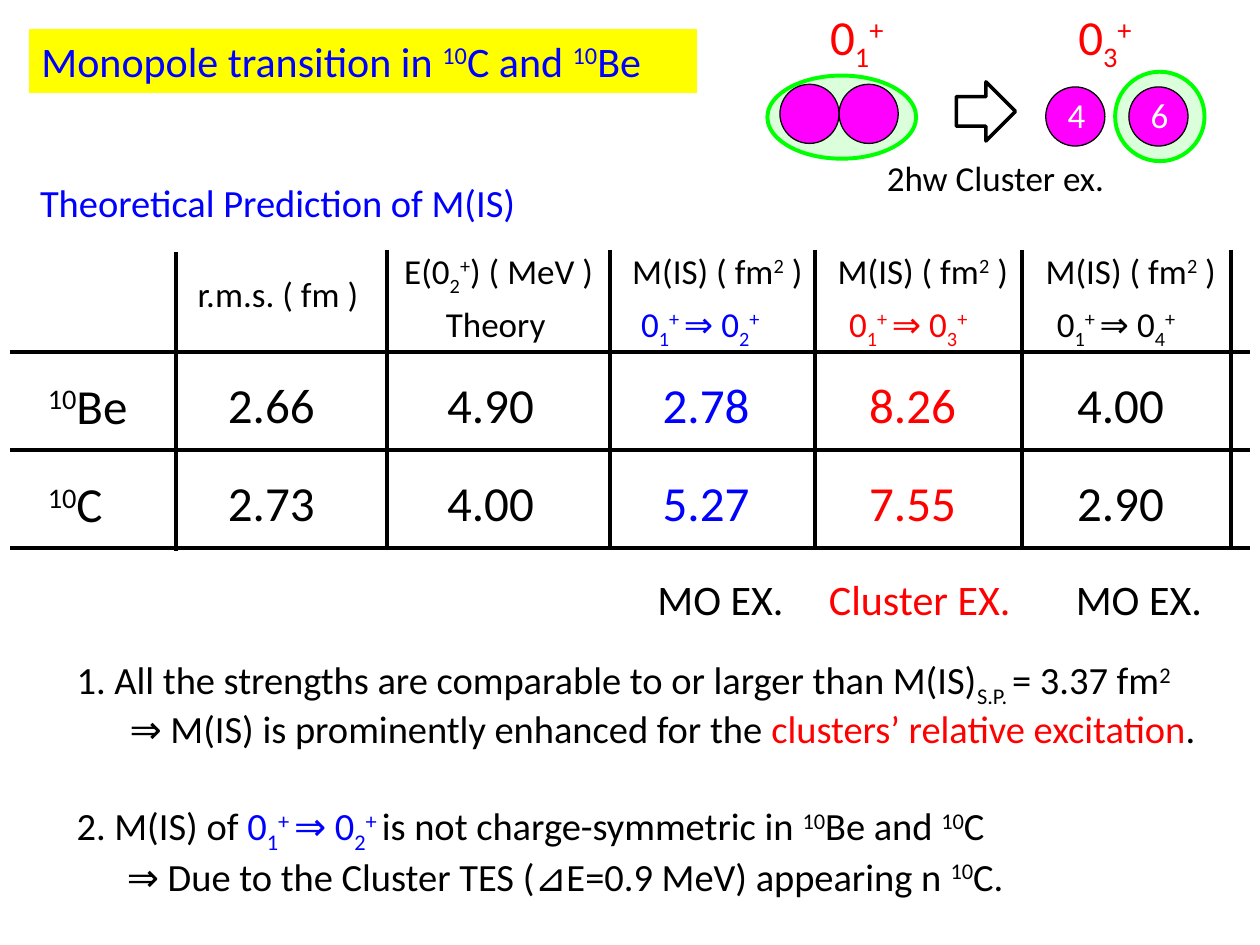
from lxml.etree import SubElement
from pptx import Presentation
from pptx.dml.color import RGBColor
from pptx.enum.shapes import MSO_CONNECTOR, MSO_SHAPE
from pptx.enum.text import MSO_ANCHOR, MSO_AUTO_SIZE, PP_ALIGN
from pptx.oxml.ns import qn
from pptx.util import Pt

BLACK, BLUE, RED, WHITE = "000000", "0000FF", "FF0000", "FFFFFF"
YELLOW, MAGENTA, GREEN, PALE_GREEN = "FFFF00", "FF00FF", "00FF00", "CCFFCC"

# Content: "|" separates runs, "^" raises a run and "_" lowers it
TITLE = "Monopole transition in |^10|C and |^10|Be"
SUBTITLE = "Theoretical Prediction of M(IS)"
STRENGTH = "M(IS) ( fm|^2| )"


def transition(level):
    return f"0|_1|^+ |⇒ 0|_{level}|^+"


NUCLEI = ["|^10|Be", "|^10|C"]
NUCLEUS_WIDTHS = [63.4, 49]
# Values centre, colour, values, then heading, second heading and
# excitation kind, each as (text, left, width)
COLUMNS = [
    (158.8, BLACK, ["2.66", "2.73"], ("r.m.s. ( fm )", 105.8, 107.3), None, None),
    (284, BLACK, ["4.90", "4.00"], ("E(0|_2|^+|) ( MeV )", 223.9, 125.3),
     ("Theory", 247.7, 72), None),
    (407.2, BLUE, ["2.78", "5.27"], (STRENGTH, 354.2, 113.8),
     (transition(2), 359.3, 95), ("MO EX.", 368.6, 87.1)),
    (525.2, RED, ["8.26", "7.55"], (STRENGTH, 471.6, 113.8),
     (transition(3), 478.1, 91.4), ("Cluster EX.", 466.6, 119.5)),
    (644, BLACK, ["4.00", "2.90"], (STRENGTH, 590.4, 113.8),
     (transition(4), 596.9, 91.4), ("MO EX.", 607.7, 87.1)),
]
# Left, top, width, coloured parts
REMARKS = [
    (36.7, 371.5, 650.9, [("1. All the strengths are comparable to or larger than "
                           "M(IS)|_S.P. |= 3.37 fm|^2", BLACK)]),
    (67, 399.6, 633.6, [("⇒ M(IS) is prominently enhanced for the ", BLACK),
                        ("clusters’ relative excitation", RED), (".", BLACK)]),
    (36.7, 455, 554.4, [("2. M(IS) of ", BLACK), ("0|_1|^+ |⇒ 0|_2|^+ ", BLUE),
                        ("is not charge-symmetric in |^10|Be and |^10|C", BLACK)]),
    (65.5, 483.8, 529.9, [("⇒ Due to the Cluster TES (⊿E=0.9 MeV) appearing n |^10|C.",
                           BLACK)]),
]

# Grid of the table
FIRST_RULE, ROW_HEIGHT = 200.9, 56.15
RULE_LEFT, RULE_RIGHT = 5.8, 714.2
COLUMN_RULES = [221, 348.5, 465.8, 583.9, 703.4]

deck = Presentation()
deck.slide_width, deck.slide_height = Pt(720), Pt(540)
slide = deck.slides.add_slide(deck.slide_layouts[6])


def color(hex_string):
    return RGBColor.from_string(hex_string)


def write(frame, parts, size, ink=BLACK, wrap=False):
    """Fill a frame with markup, or with a list of (markup, colour)."""
    frame.word_wrap = wrap
    frame.auto_size = MSO_AUTO_SIZE.SHAPE_TO_FIT_TEXT
    paragraph = frame.paragraphs[0]
    paragraph.alignment = PP_ALIGN.LEFT
    for markup, part_ink in [(parts, ink)] if isinstance(parts, str) else parts:
        for piece in filter(None, markup.split("|")):
            shift = {"^": "30000", "_": "-25000"}.get(piece[0])
            run = paragraph.add_run()
            run.text = piece[1:] if shift else piece
            run.font.name, run.font.size = "Calibri", Pt(size)
            run.font.color.rgb = color(part_ink)
            if shift:
                run.font._element.set("baseline", shift)


def text(parts, left, top, width, size=20, ink=BLACK):
    height = size * 1.22 + 7.2
    box = slide.shapes.add_textbox(Pt(left), Pt(top), Pt(width), Pt(height))
    write(box.text_frame, parts, size=size, ink=ink)


def rule(x1, y1, x2, y2):
    line = slide.shapes.add_connector(MSO_CONNECTOR.STRAIGHT,
                                      Pt(x1), Pt(y1), Pt(x2), Pt(y2))
    line.line.color.rgb, line.line.width = color(BLACK), Pt(2.25)
    SubElement(line._element.spPr, qn("a:effectLst"))


def shape(kind, left, top, width, height, fill=None, line=None, weight=0.75, opacity=100):
    item = slide.shapes.add_shape(kind, Pt(left), Pt(top), Pt(width), Pt(height))
    item.shadow.inherit = False
    if fill:
        item.fill.solid()
        item.fill.fore_color.rgb = color(fill)
        if opacity < 100:
            tint = item._element.spPr.find(qn("a:solidFill"))[0]
            SubElement(tint, qn("a:alpha"), val=str(opacity * 1000))
    else:
        item.fill.background()
    if line:
        item.line.color.rgb, item.line.width = color(line), Pt(weight)
    else:
        item.line.fill.background()
    return item


# Title and subtitle
banner = shape(MSO_SHAPE.RECTANGLE, 16.6, 16.6, 381.6, 36.5, fill=YELLOW)
banner.text_frame.vertical_anchor = MSO_ANCHOR.TOP
write(banner.text_frame, TITLE, size=24, ink=BLUE, wrap=True)
text(SUBTITLE, 15.8, 98.6, 294.5, size=22, ink=BLUE)

# Table rules
for row in range(3):
    y = FIRST_RULE + row * ROW_HEIGHT
    rule(RULE_LEFT, y, RULE_RIGHT, y)
rule(100.8, 144, 100.8, 314.6)
for x in COLUMN_RULES:
    rule(x, 142.6, x, 312.5)

# Table entries
for row, (nucleus, width) in enumerate(zip(NUCLEI, NUCLEUS_WIDTHS)):
    text(nucleus, 20.2, 211 + row * ROW_HEIGHT, width, size=28)
for center, ink, values, heading, subheading, excitation in COLUMNS:
    text(*heading[:2], 139 if subheading else 151.9, heading[2])
    if subheading:
        text(*subheading[:2], 169.2, subheading[2], ink=ink)
    for row, value in enumerate(values):
        text(value, center - 35.6, 210.2 + row * ROW_HEIGHT, 71.3, size=28, ink=ink)
    if excitation:
        text(*excitation[:2], 324, excitation[2], size=24,
             ink=RED if ink == RED else BLACK)

# Remarks
for left, top, width, parts in REMARKS:
    text(parts, left, top, width, size=22)

# Cluster excitation sketch: clouds first, then the clusters
for left, top, width, height in [(438.5, 43.2, 85, 47.5), (637.2, 41, 51.1, 51.1)]:
    shape(MSO_SHAPE.OVAL, left, top, width, height, fill=PALE_GREEN, line=GREEN,
          weight=2.25, opacity=70)
for left, top, label in [(445.7, 48.2, ""), (479.5, 48.2, ""),
                         (597.6, 49.7, "4"), (645.1, 49.7, "6")]:
    shape(MSO_SHAPE.OVAL, left, top, 33.8, 33.8, fill=MAGENTA, line=BLACK)
    if label:
        text(label, left + 5.4, top, 24.5, ink=WHITE)
shape(MSO_SHAPE.RIGHT_ARROW, 546.5, 46.8, 33.8, 33.8, line=BLACK, weight=2)
text("2hw Cluster ex.", 499.7, 85.7, 139.7)
for level, left in [(1, 467.3), (3, 609.1)]:
    text(f"0|_{level}|^+", left, 0, 47.5, size=28, ink=RED)

deck.save("out.pptx")
